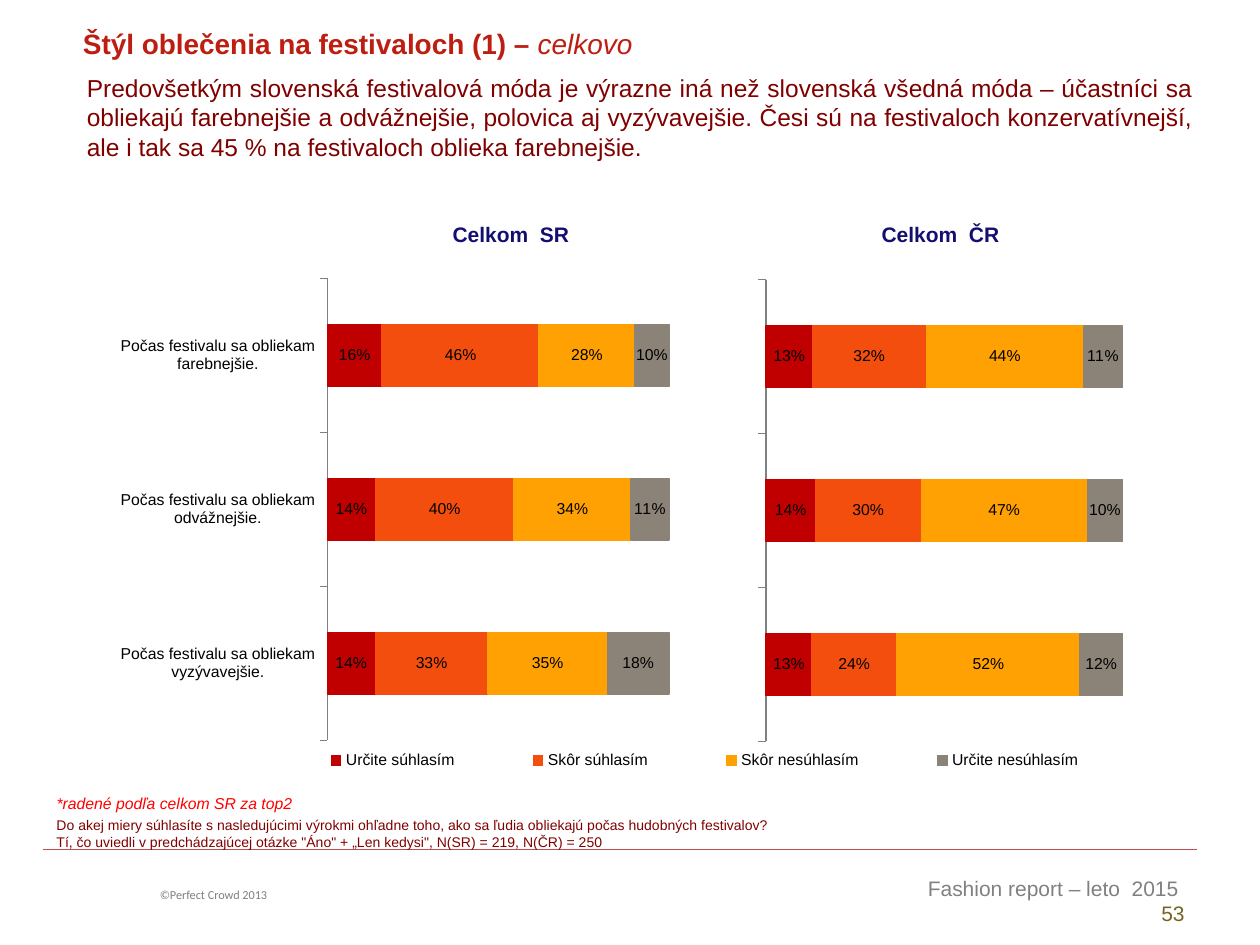
from dataclasses import dataclass
from typing import Any

from lxml.etree import SubElement
from pptx import Presentation
from pptx.chart.data import CategoryChartData
from pptx.dml.color import RGBColor
from pptx.enum.chart import (XL_CHART_TYPE, XL_LABEL_POSITION, XL_LEGEND_POSITION,
                             XL_TICK_LABEL_POSITION, XL_TICK_MARK)
from pptx.enum.shapes import MSO_CONNECTOR
from pptx.enum.text import MSO_ANCHOR, PP_ALIGN
from pptx.oxml.ns import qn
from pptx.util import Inches, Pt

STATEMENTS = [f"Počas festivalu sa obliekam {manner}."
              for manner in ("farebnejšie", "odvážnejšie", "vyzývavejšie")]
ANSWERS = {"Určite súhlasím": "C00000", "Skôr súhlasím": "F34E0D",
           "Skôr nesúhlasím": "FFA102", "Určite nesúhlasím": "8B8278"}
SLOVAK_SHARES = [(16, 14, 14), (46, 40, 33), (28, 34, 35), (10, 11, 18)]
CZECH_SHARES = [(13, 14, 13), (32, 30, 24), (44, 47, 52), (11, 10, 12)]
MAROON, GREY, NAVY = "800000", "808080", "120F71"


def colour(value):
    """Turn a hex string into a colour."""
    return RGBColor.from_string(value)


def grid(*cells):
    """Turn columns and rows of a 100 by 75 grid into lengths."""
    return [Inches(cell / 10) for cell in cells]


@dataclass
class ReportPage:
    """Holds the report style and the slide being filled."""

    slide: Any
    font: str = "Arial"

    def run(self, paragraph, words, size, ink, bold=False, italic=False, font=None):
        """Append one styled run."""
        run = paragraph.add_run()
        run.text = words
        run.font.name = font or self.font
        run.font.size = Pt(size)
        run.font.bold = bold
        run.font.italic = italic
        run.font.color.rgb = colour(ink)

    def text(self, place, *paragraphs, align=PP_ALIGN.LEFT, wrap=True):
        """Add a text box; each paragraph is a list of run settings."""
        frame = self.slide.shapes.add_textbox(*grid(*place)).text_frame
        frame.word_wrap = wrap
        for index, runs in enumerate(paragraphs):
            paragraph = frame.add_paragraph() if index else frame.paragraphs[0]
            paragraph.alignment = align
            for settings in runs:
                if settings is None:
                    paragraph.add_line_break()
                else:
                    self.run(paragraph, **settings)

    def rule(self, left, right, row, ink):
        """Draw a thin horizontal line."""
        line = self.slide.shapes.add_connector(
            MSO_CONNECTOR.STRAIGHT, *grid(left, row, right, row))
        line.line.color.rgb = colour(ink)
        line.line.width = Pt(0.75)
        SubElement(line._element.spPr, qn("a:effectLst"))

    def headings(self, place, columns):
        """Add a one-row table of (heading, width, left margin) columns."""
        table = self.slide.shapes.add_table(1, len(columns), *grid(*place)).table
        table.first_row = table.horz_banding = False
        for index, (heading, width, indent) in enumerate(columns):
            table.columns[index].width, = grid(width)
            cell = table.cell(0, index)
            cell.fill.background()
            cell.vertical_anchor = MSO_ANCHOR.MIDDLE
            cell.margin_left, cell.margin_right, cell.margin_top, cell.margin_bottom = grid(
                indent, 0.1, 0.1, 0)
            paragraph = cell.text_frame.paragraphs[0]
            paragraph.alignment = PP_ALIGN.CENTER
            self.run(paragraph, heading, 12, NAVY, bold=True)

    def layout(self, parent, index, inner=False, **shares):
        """Pin a chart part to shares of the chart's size."""
        for old in parent.findall(qn("c:layout")):
            parent.remove(old)
        holder = parent.makeelement(qn("c:layout"))
        parent.insert(index, holder)
        manual = SubElement(holder, qn("c:manualLayout"))
        if inner:
            SubElement(manual, qn("c:layoutTarget"), val="inner")
        for edge in ("xMode", "yMode"):
            SubElement(manual, qn(f"c:{edge}"), val="edge")
        for side, share in shares.items():
            SubElement(manual, qn(f"c:{side}"), val=str(share))

    def answers(self, place, shares, plot_width, labelled):
        """Add a stacked bar chart, with statements and legend if labelled."""
        data = CategoryChartData(number_format='#,##0"%"')
        data.categories = STATEMENTS
        for answer, values in zip(ANSWERS, shares):
            data.add_series(answer, values)
        chart = self.slide.shapes.add_chart(
            XL_CHART_TYPE.BAR_STACKED_100, *grid(*place), data).chart
        chart.has_title = False
        chart.font.name = self.font
        chart.font.size = Pt(9)
        chart.font.color.rgb = colour("000000")

        statements, scale = chart.category_axis, chart.value_axis
        statements.reverse_order = True
        statements.major_tick_mark = XL_TICK_MARK.OUTSIDE
        statements.format.line.color.rgb = colour(GREY)
        if not labelled:
            statements.tick_label_position = XL_TICK_LABEL_POSITION.NONE
        scale.visible = scale.has_major_gridlines = False

        plot = chart.plots[0]
        plot.gap_width, plot.overlap = 150, 100
        plot.vary_by_categories = False
        for series, ink in zip(plot.series, ANSWERS.values()):
            series.format.fill.solid()
            series.format.fill.fore_color.rgb = colour(ink)
            series.format.line.color.rgb = colour(ink)
            series.format.line.width = Pt(0.75)
            labels = series.data_labels
            labels.show_value = True
            labels.position = XL_LABEL_POSITION.CENTER
            labels.number_format = '#,##0"%"'
            labels.number_format_is_linked = False
        area = chart._chartSpace.chart.plotArea
        self.layout(area, 0, inner=True, x=0.22, y=0.027, w=plot_width, h=0.894)

        chart.has_legend = labelled
        if labelled:
            chart.legend.position = XL_LEGEND_POSITION.BOTTOM
            chart.legend.include_in_layout = False
            self.layout(chart.legend._element, 1, x=0.16, y=0.93, w=0.77, h=0.06)


def main():
    """Build the festival fashion page."""
    deck = Presentation()
    deck.slide_width, deck.slide_height = grid(100, 75)
    page = ReportPage(deck.slides.add_slide(deck.slide_layouts[6]))

    page.rule(3.4, 95, 67.4, "BF4C48")
    page.text((11.7, 69.9, 29.1, 2.2),
              [dict(words="©Perfect Crowd 2013", size=7, ink=GREY, font="Calibri")])
    page.text((57.9, 69, 37.1, 5),
              [dict(words="Fashion report – leto  2015 ", size=12, ink=GREY), None,
               dict(words="53", size=12, ink="756522")], align=PP_ALIGN.RIGHT)
    page.text((5.6, 1.6, 75.1, 3.7),
              [dict(words="Štýl oblečenia na festivaloch (1) – ", size=16, ink="BE1E11", bold=True),
               dict(words="celkovo", size=16, ink="BE1E11", italic=True)])
    page.text((3.5, 64.3, 90.6, 3.7),
              [dict(words="Do akej miery súhlasíte s nasledujúcimi výrokmi ohľadne toho, "
                          "ako sa ľudia obliekajú počas hudobných festivalov?",
                    size=8, ink=MAROON)],
              [dict(words="Tí, čo uviedli v predchádzajúcej otázke \"Áno\" + „Len kedysi\", "
                          "N(SR) = 219, N(ČR) = 250", size=8, ink=MAROON)])
    page.text((5.9, 5.3, 89.8, 8.1),
              [dict(words="Predovšetkým slovenská festivalová móda je výrazne iná než slovenská "
                          "všedná móda – účastníci sa obliekajú farebnejšie a odvážnejšie, "
                          "polovica aj vyzývavejšie. Česi sú na festivaloch konzervatívnejší, "
                          "ale i tak sa 45 % na festivaloch oblieka farebnejšie.",
                    size=14, ink=MAROON)], align=PP_ALIGN.JUSTIFY)
    page.text((3.5, 62.5, 21.2, 2.5),
              [dict(words="*radené podľa celkom SR za top2", size=9, ink="FF0000", italic=True)],
              wrap=False)
    page.headings((32.1, 16.9, 49.5, 3.4),
                  [("Celkom  SR", 16.9, 0.1), ("Celkom  ČR", 32.6, 18.8)])
    page.answers((5.7, 21, 92.2, 41), SLOVAK_SHARES, 0.294, labelled=True)
    page.answers((40.5, 21.1, 92.2, 41), CZECH_SHARES, 0.307, labelled=False)
    deck.save("out.pptx")


if __name__ == "__main__":
    main()
